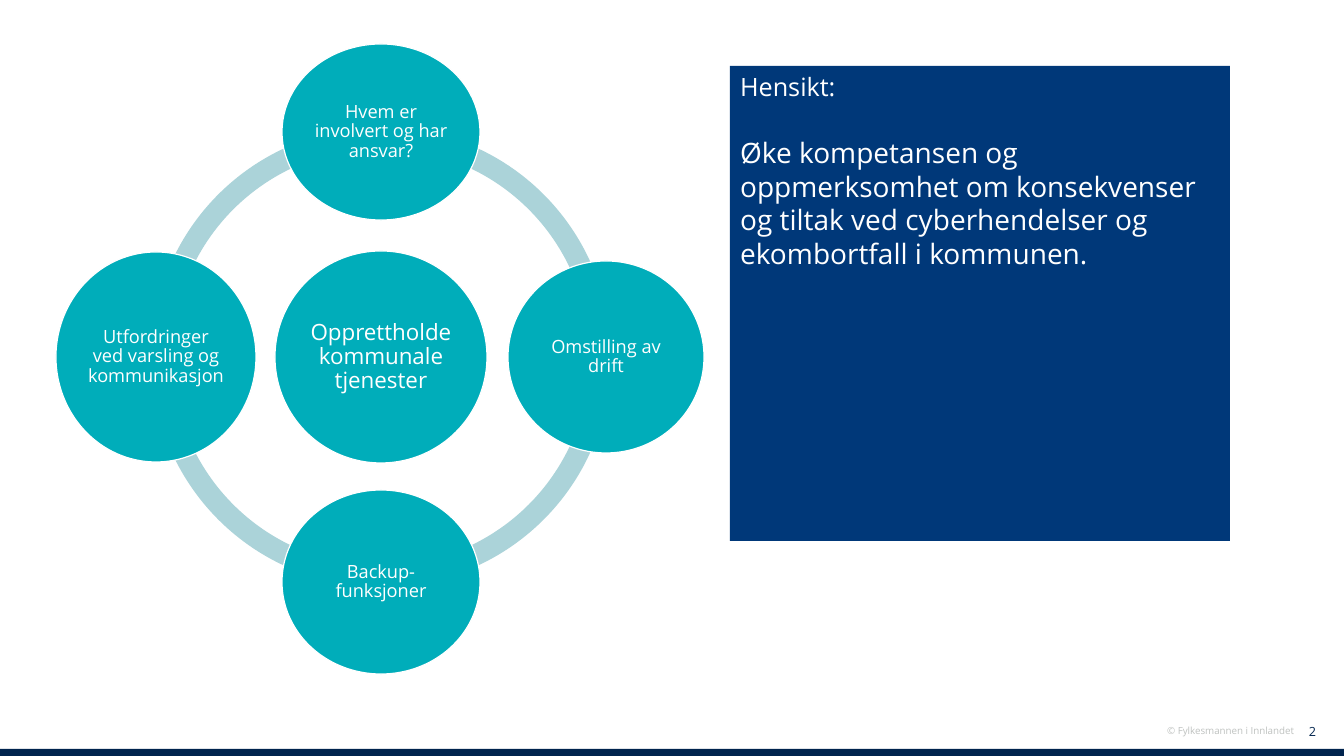
from dataclasses import dataclass

from lxml.etree import SubElement
from pptx import Presentation
from pptx.dml.color import RGBColor
from pptx.enum.shapes import MSO_SHAPE
from pptx.enum.text import MSO_ANCHOR, MSO_AUTO_SIZE, PP_ALIGN
from pptx.oxml.ns import qn
from pptx.shapes.autoshape import Shape
from pptx.slide import Slide
from pptx.text.text import _Paragraph
from pptx.util import Emu, Inches, Pt

PX_PER_INCH = 100.8


@dataclass(frozen=True)
class Theme:
    font: str = "Open Sans"
    teal: str = "00ADBA"
    ring: str = "ABD3D9"
    navy: str = "003879"
    dark: str = "00244E"
    grey: str = "BFC2C0"
    white: str = "FFFFFF"
    core_pt: int = 16
    topic_pt: int = 13
    heading_pt: int = 18
    purpose_pt: int = 20
    number_pt: int = 9
    copyright_pt: int = 7
    gap_pt: float = 24.5
    outline_pt: float = 0.85


@dataclass(frozen=True)
class Box:
    left: int
    top: int
    width: int
    height: int

    def emu(self) -> tuple[Emu, Emu, Emu, Emu]:
        return px(self.left), px(self.top), px(self.width), px(self.height)


@dataclass(frozen=True)
class Topic:
    text: str
    across: int
    down: int
    width: int
    height: int
    size: int


@dataclass(frozen=True)
class FooterText:
    text: str
    box: Box
    size: int
    color: str
    anchor: MSO_ANCHOR


THEME = Theme()
HUB_X, HUB_Y = 381, 357
ORBIT = 225
RING_RADIUS = 230
RING_THICKNESS = 0.046
QUARTER_TURN = 54
FULL_TURN = 4 * QUARTER_TURN

TOPICS = [
    Topic("Opprettholde kommunale tjenester", 0, 0, 212, 212, THEME.core_pt),
    Topic("Hvem er involvert og har ansvar?", 0, -1, 198, 176, THEME.topic_pt),
    Topic("Omstilling av drift", 1, 0, 196, 192, THEME.topic_pt),
    Topic("Backup-funksjoner", 0, 1, 198, 184, THEME.topic_pt),
    Topic("Utfordringer ved varsling og kommunikasjon", -1, 0, 200, 210, THEME.topic_pt),
]

FOOTER = [
    FooterText("2", Box(1272, 718, 54, 26), THEME.number_pt, THEME.dark, MSO_ANCHOR.MIDDLE),
    FooterText("© Fylkesmannen i Innlandet", Box(1094, 720, 210, 22),
               THEME.copyright_pt, THEME.grey, MSO_ANCHOR.TOP),
]

PURPOSE = (
    "Øke kompetansen og oppmerksomhet om konsekvenser og tiltak ved "
    "cyberhendelser og ekombortfall i kommunen."
)


def px(length: int) -> Emu:
    return Inches(length / PX_PER_INCH)


def rgb(color: str) -> RGBColor:
    return RGBColor.from_string(color)


def style(paragraph: _Paragraph, size: int, color: str, align: PP_ALIGN) -> None:
    paragraph.alignment = align
    for run in paragraph.runs:
        run.font.name = THEME.font
        run.font.size = Pt(size)
        run.font.color.rgb = rgb(color)


def draw_shape(slide: Slide, preset: MSO_SHAPE, box: Box, color: str) -> Shape:
    shape = slide.shapes.add_shape(preset, *box.emu())
    shape.shadow.inherit = False
    shape.fill.solid()
    shape.fill.fore_color.rgb = rgb(color)
    shape.line.fill.background()
    return shape


def draw_ring(slide: Slide) -> None:
    box = Box(HUB_X - RING_RADIUS, HUB_Y - RING_RADIUS, 2 * RING_RADIUS, 2 * RING_RADIUS)
    for start in range(0, FULL_TURN, QUARTER_TURN):
        arc = draw_shape(slide, MSO_SHAPE.BLOCK_ARC, box, THEME.ring)
        arc.adjustments[0] = start
        arc.adjustments[1] = (start + QUARTER_TURN) % FULL_TURN
        arc.adjustments[2] = RING_THICKNESS


def draw_topic(slide: Slide, topic: Topic) -> None:
    left = HUB_X + topic.across * ORBIT - topic.width // 2
    top = HUB_Y + topic.down * ORBIT - topic.height // 2
    circle = draw_shape(slide, MSO_SHAPE.OVAL, Box(left, top, topic.width, topic.height), THEME.teal)
    circle.line.color.rgb = rgb(THEME.white)
    circle.line.width = Pt(THEME.outline_pt)
    frame = circle.text_frame
    frame.margin_left = frame.margin_right = frame.margin_top = frame.margin_bottom = px(2)
    frame.word_wrap = True
    frame.vertical_anchor = MSO_ANCHOR.MIDDLE
    frame.text = topic.text
    frame.paragraphs[0].line_spacing = 0.9
    style(frame.paragraphs[0], topic.size, THEME.white, PP_ALIGN.CENTER)


def draw_purpose(slide: Slide) -> None:
    panel = slide.placeholders[1]
    panel.left, panel.top, panel.width, panel.height = Box(730, 66, 500, 475).emu()
    panel.fill.solid()
    panel.fill.fore_color.rgb = rgb(THEME.navy)
    frame = panel.text_frame
    frame.word_wrap = True
    frame.auto_size = MSO_AUTO_SIZE.NONE
    frame.vertical_anchor = MSO_ANCHOR.TOP
    frame.text = f"Hensikt:\n{PURPOSE}"
    settings = ((THEME.heading_pt, 0), (THEME.purpose_pt, THEME.gap_pt))
    for paragraph, (size, gap) in zip(frame.paragraphs, settings):
        properties = paragraph._p.get_or_add_pPr()
        properties.set("marL", "0")
        properties.set("indent", "0")
        SubElement(properties, qn("a:buNone"))
        paragraph.space_before = Pt(gap)
        style(paragraph, size, THEME.white, PP_ALIGN.LEFT)


def draw_footer_text(slide: Slide, footer: FooterText) -> None:
    frame = slide.shapes.add_textbox(*footer.box.emu()).text_frame
    frame.word_wrap = True
    frame.vertical_anchor = footer.anchor
    frame.text = footer.text
    style(frame.paragraphs[0], footer.size, footer.color, PP_ALIGN.RIGHT)


def main() -> None:
    presentation = Presentation()
    presentation.slide_width, presentation.slide_height = px(1344), px(756)
    slide = presentation.slides.add_slide(presentation.slide_layouts[1])
    unused_title = slide.shapes.title.element
    unused_title.getparent().remove(unused_title)

    draw_shape(slide, MSO_SHAPE.RECTANGLE, Box(0, 749, 1344, 7), THEME.dark)
    for footer in FOOTER:
        draw_footer_text(slide, footer)
    draw_ring(slide)
    for topic in TOPICS:
        draw_topic(slide, topic)
    draw_purpose(slide)
    presentation.save("out.pptx")


if __name__ == "__main__":
    main()
